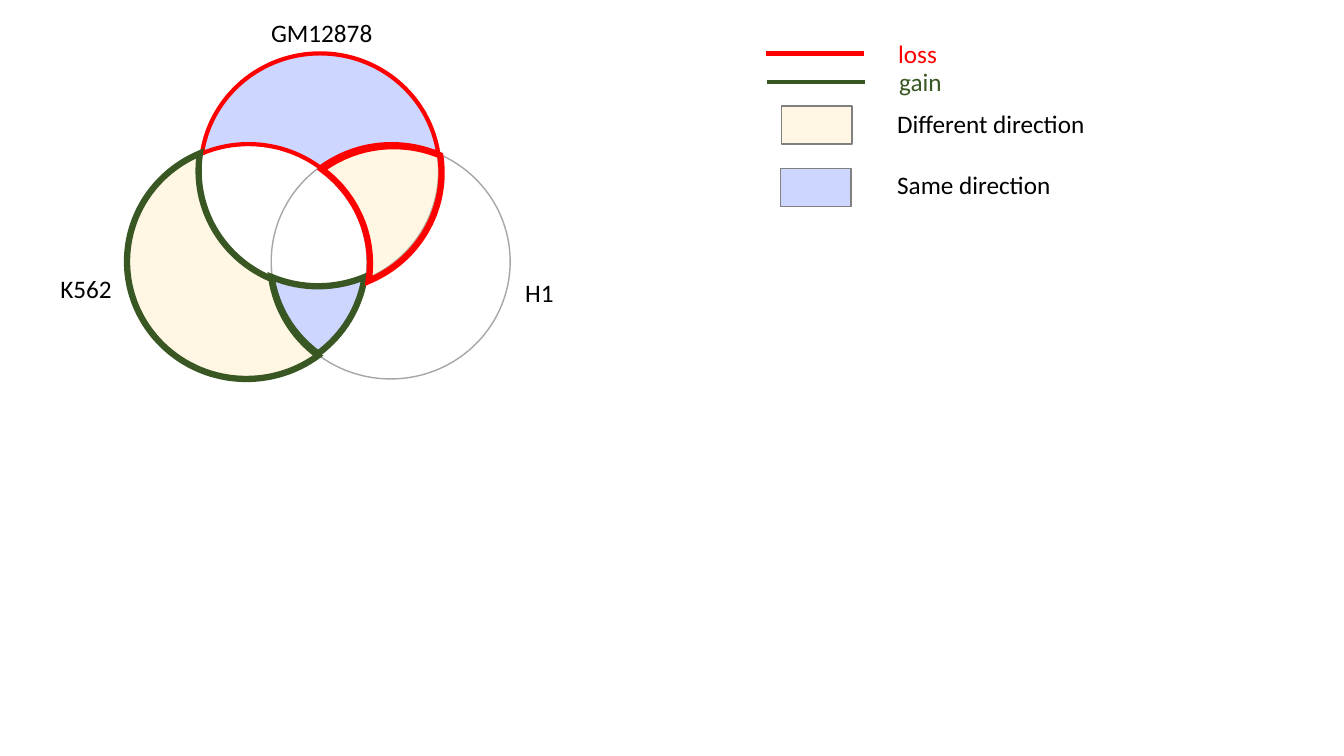
from dataclasses import dataclass
from math import atan2, cos, floor, hypot, pi, sin, tan

from lxml.etree import Element, SubElement
from pptx import Presentation
from pptx.dml.color import RGBColor
from pptx.enum.shapes import MSO_CONNECTOR, MSO_SHAPE
from pptx.enum.text import MSO_AUTO_SIZE
from pptx.oxml.ns import qn
from pptx.util import Pt

PX = 9144  # EMU per px, 100 px to the inch
COLORS = {
    "loss": "FF0000",
    "gain": "385723",
    "different": "FFD579",
    "same": "0432FF",
    "outline": "A6A6A6",
    "swatch": "808080",
    "text": "000000",
}
OPACITY = 20  # percent
DIAMETER_X, DIAMETER_Y = 237, 233
RADIUS_X, RADIUS_Y = DIAMETER_X / 2, DIAMETER_Y / 2
Point = tuple[float, float]


@dataclass(frozen=True)
class Circle:
    left: int
    top: int

    @property
    def center(self) -> Point:
        return self.left + RADIUS_X, self.top + RADIUS_Y


@dataclass(frozen=True)
class Label:
    text: str
    left: int
    top: int
    width: int
    color: str = "text"


@dataclass(frozen=True)
class Key:
    color: str
    left: int
    top: int


@dataclass(frozen=True)
class Arc:
    circle: Circle
    start: Point
    end: Point
    clockwise: bool


@dataclass(frozen=True)
class Region:
    fill: str
    line: str
    weight: float
    shift: tuple[int, int]
    arcs: list[Arc]


def crossing(first: Circle, second: Circle, side: int) -> Point:
    """Crossing of two equal ellipses; side -1 is the upper one, 1 the lower."""
    (x1, y1), (x2, y2) = first.center, second.center
    half_x, half_y = (x2 - x1) / 2 / RADIUS_X, (y2 - y1) / 2 / RADIUS_Y
    half = hypot(half_x, half_y)
    reach = side * (1 - half**2) ** 0.5 / half
    if half_x < 0:
        reach = -reach
    return ((x1 + x2) / 2 - reach * half_y * RADIUS_X,
            (y1 + y2) / 2 + reach * half_x * RADIUS_Y)


def arc_curves(arc: Arc) -> list[list[Point]]:
    """Bezier curves of an arc, split at the quadrants: two controls and an end."""
    x, y = arc.circle.center
    start, end = (atan2((py - y) / RADIUS_Y, (px - x) / RADIUS_X)
                  for px, py in (arc.start, arc.end))
    sweep = (end - start) % (2 * pi)
    if not arc.clockwise:
        sweep -= 2 * pi
    end = start + sweep
    low, high = sorted((start, end))
    quadrants = [n * pi / 2 for n in range(floor(low / pi * 2) + 1, floor(high / pi * 2) + 1)]
    knots = sorted({low, *quadrants, high}, reverse=not arc.clockwise)
    curves = []
    for a, b in zip(knots, knots[1:]):
        pull = 4 / 3 * tan((b - a) / 4)
        unit = [(cos(a) - pull * sin(a), sin(a) + pull * cos(a)),
                (cos(b) + pull * sin(b), sin(b) - pull * cos(b)),
                (cos(b), sin(b))]
        curves.append([(x + RADIUS_X * u, y + RADIUS_Y * v) for u, v in unit])
    return curves


def rgb(name: str) -> RGBColor:
    return RGBColor.from_string(COLORS[name])


def format_shape(shape, fill: str | None, line: str, weight: float) -> None:
    shape.shadow.inherit = False
    shape.line.color.rgb = rgb(line)
    shape.line.width = Pt(weight)
    if fill is None:
        shape.fill.background()
        return
    shape.fill.solid()
    shape.fill.fore_color.rgb = rgb(fill)
    color = shape._element.spPr.find(qn("a:solidFill")).find(qn("a:srgbClr"))
    SubElement(color, qn("a:alpha"), val=str(OPACITY * 1000))


def add_label(shapes, label: Label) -> None:
    box = shapes.add_textbox(label.left * PX, label.top * PX, label.width * PX, 40 * PX)
    box.text_frame.word_wrap = False
    box.text_frame.auto_size = MSO_AUTO_SIZE.SHAPE_TO_FIT_TEXT
    span = box.text_frame.paragraphs[0].add_run()
    span.text = label.text
    span.font.name = "Calibri"
    span.font.size = Pt(18)
    span.font.color.rgb = rgb(label.color)


def add_key_line(shapes, key: Key) -> None:
    line = shapes.add_connector(MSO_CONNECTOR.STRAIGHT, key.left * PX, key.top * PX,
                                (key.left + 97) * PX, key.top * PX)
    line.line.color.rgb = rgb(key.color)
    line.line.width = Pt(3)
    SubElement(line._element.spPr, qn("a:effectLst"))


def add_swatch(shapes, key: Key) -> None:
    swatch = shapes.add_shape(MSO_SHAPE.RECTANGLE, key.left * PX, key.top * PX, 70 * PX, 38 * PX)
    format_shape(swatch, key.color, "swatch", 1)


def add_circle(shapes, circle: Circle) -> None:
    oval = shapes.add_shape(MSO_SHAPE.OVAL, circle.left * PX, circle.top * PX,
                            DIAMETER_X * PX, DIAMETER_Y * PX)
    format_shape(oval, None, "outline", 1)


def add_region(shapes, region: Region) -> None:
    shift_x, shift_y = region.shift
    curves = [[(round((x + shift_x) * PX), round((y + shift_y) * PX)) for x, y in curve]
              for arc in region.arcs for curve in arc_curves(arc)]
    builder = shapes.build_freeform(*curves[-1][-1], scale=1.0)
    builder.add_line_segments([curve[-1] for curve in curves], close=True)
    outline = builder.convert_to_shape()
    # Bend each straight segment into its curve
    for segment, curve in zip(list(outline._element.iter(qn("a:lnTo"))), curves):
        segment.tag = qn("a:cubicBezTo")
        for position, (x, y) in enumerate(curve[:2]):
            segment.insert(position, Element(qn("a:pt"), x=str(x - outline.left),
                                             y=str(y - outline.top)))
    format_shape(outline, region.fill, region.line, region.weight)
    SubElement(outline._element.spPr.find(qn("a:ln")), qn("a:miter"), lim="800000")


# Venn geometry
GM, K562, H1 = Circle(198, 53), Circle(127, 143), Circle(269, 143)
GM_K_UP, GM_K_LOW = crossing(GM, K562, -1), crossing(GM, K562, 1)
GM_H_UP, GM_H_LOW = crossing(GM, H1, -1), crossing(GM, H1, 1)
K_H_UP, K_H_LOW = crossing(K562, H1, -1), crossing(K562, H1, 1)

REGIONS = [
    Region("same", "loss", 3, (1, 0), [
        Arc(GM, GM_K_UP, GM_H_UP, True),
        Arc(H1, GM_H_UP, K_H_UP, False),
        Arc(K562, K_H_UP, GM_K_UP, False)]),
    Region("same", "gain", 4.5, (-1, -2), [
        Arc(GM, GM_H_LOW, GM_K_LOW, False),
        Arc(K562, GM_K_LOW, K_H_LOW, True),
        Arc(H1, K_H_LOW, GM_H_LOW, True)]),
    Region("different", "gain", 4.5, (-1, 0), [
        Arc(K562, K_H_LOW, GM_K_UP, True),
        Arc(GM, GM_K_UP, GM_H_LOW, False),
        Arc(H1, GM_H_LOW, K_H_LOW, False)]),
    Region("different", "loss", 4.5, (3, 2), [
        Arc(H1, K_H_UP, GM_H_UP, True),
        Arc(GM, GM_H_UP, GM_K_LOW, True),
        Arc(K562, GM_K_LOW, K_H_UP, False)]),
]
SET_LABELS = [Label("GM12878", 259, 12, 122), Label("K562", 50, 266, 72), Label("H1", 511, 270, 49)]

# Legend
KEY_LINES = [Key("loss", 760, 53), Key("gain", 761, 81)]
SWATCHES = [Key("different", 775, 105), Key("same", 774, 167)]
KEY_LABELS = [
    Label("loss", 881, 33, 59, "loss"),
    Label("gain", 882, 61, 63, "gain"),
    Label("Different direction", 880, 103, 209),
    Label("Same direction", 880, 163, 174),
]


def main() -> None:
    deck = Presentation()
    deck.slide_width, deck.slide_height = 1333 * PX, 750 * PX
    page = deck.slides.add_slide(deck.slide_layouts[6])
    venn = page.shapes.add_group_shape()
    for add, shapes, items in (
        (add_key_line, page.shapes, KEY_LINES),
        (add_swatch, page.shapes, SWATCHES),
        (add_label, page.shapes, KEY_LABELS),
        (add_circle, venn.shapes, (GM, K562, H1)),
        (add_region, venn.shapes, REGIONS),
        (add_label, venn.shapes, SET_LABELS),
    ):
        for item in items:
            add(shapes, item)
    deck.save("out.pptx")


if __name__ == "__main__":
    main()
